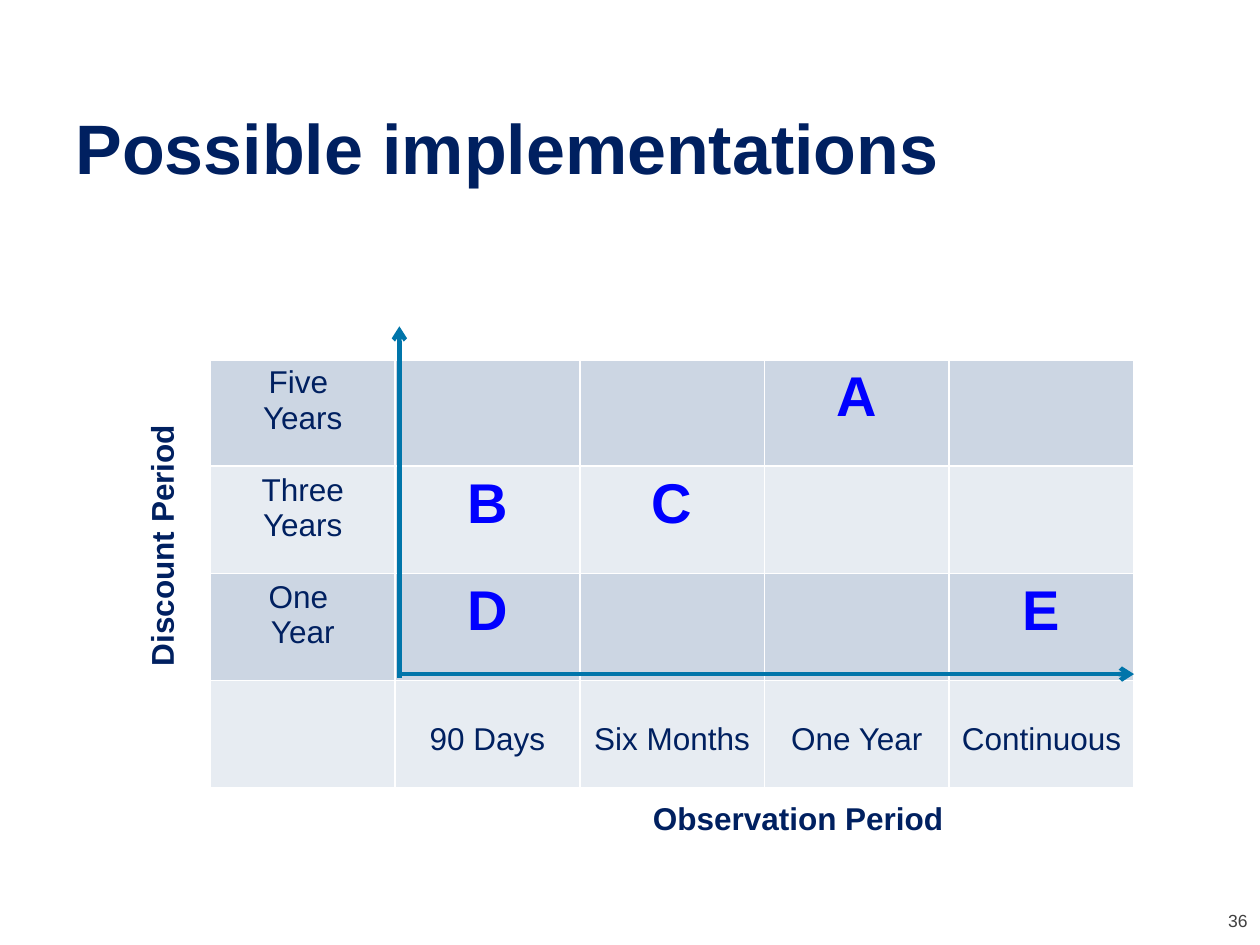
import dataclasses

import pptx
import pptx.dml.color
import pptx.enum.shapes
import pptx.enum.text
import pptx.oxml.ns
import pptx.util
from lxml import etree

Inches = pptx.util.Inches
Align = pptx.enum.text.PP_ALIGN
Anchor = pptx.enum.text.MSO_ANCHOR
qn = pptx.oxml.ns.qn

NAVY, BLUE, TEAL, GREY, WHITE = "002060", "0000FF", "0075AA", "404040", "FFFFFF"
BANDS = ("CCD6E3", "E7ECF2")
ROWS = [
    ["", "", "", "", ""],
    ["Five \vYears", "", "", "A", ""],
    ["Three Years", "B", "C", "", ""],
    ["One \vYear", "D", "", "", "E"],
    ["", "90 Days", "Six Months", "One Year", "Continuous"],
]


@dataclasses.dataclass
class Label:
    text: str
    left: float
    top: float
    width: float
    height: float
    size: int = 18
    color: str = NAVY
    bold: bool = True
    align: Align = Align.CENTER
    anchor: Anchor = Anchor.TOP
    rotation: int = 0


@dataclasses.dataclass
class Axis:
    start: tuple[float, float]
    end: tuple[float, float]


LABELS = [
    Label("36", 7.67, 7.11, 2.33, 0.4, 10, GREY, False, Align.RIGHT, Anchor.MIDDLE),
    Label("Observation Period", 4.25, 6.29, 4.17, 0.42),
    Label("Discount Period", -0.21, 4.12, 3, 0.42, rotation=270),
]
AXES = [Axis((3.17, 5.38), (3.17, 2.59)), Axis((3.17, 5.35), (9, 5.35))]


def rgb(value: str) -> pptx.dml.color.RGBColor:
    return pptx.dml.color.RGBColor.from_string(value)


def write(frame, text: str, size: int, color: str, bold: bool, align: Align) -> None:
    para = frame.paragraphs[0]
    para.text = text
    para.alignment = align
    para.font.name = "Arial"
    para.font.size = pptx.util.Pt(size)
    para.font.bold = bold
    para.font.color.rgb = rgb(color)


def add_label(page, label: Label) -> None:
    box = page.shapes.add_textbox(*map(Inches, (label.left, label.top, label.width, label.height)))
    box.rotation = label.rotation
    box.text_frame.word_wrap = True
    box.text_frame.vertical_anchor = label.anchor
    write(box.text_frame, label.text, label.size, label.color, label.bold, label.align)


def add_axis(page, axis: Axis) -> None:
    line = page.shapes.add_connector(
        pptx.enum.shapes.MSO_CONNECTOR.STRAIGHT, *map(Inches, axis.start + axis.end))
    line.line.color.rgb = rgb(TEAL)
    line.line.width = pptx.util.Pt(2.5)
    etree.SubElement(line.line._get_or_add_ln(), qn("a:tailEnd"), type="arrow")
    etree.SubElement(line._element.spPr, qn("a:effectLst"))


def set_borders(cell, bottom: int) -> None:
    properties = cell._tc.get_or_add_tcPr()
    widths = {"lnL": 1, "lnR": 1, "lnT": 1, "lnB": bottom}
    for position, (side, points) in enumerate(widths.items()):
        border = etree.Element(qn(f"a:{side}"), w=str(pptx.util.Pt(points)))
        fill = etree.SubElement(border, qn("a:solidFill"))
        etree.SubElement(fill, qn("a:srgbClr"), val=WHITE)
        properties.insert(position, border)


def add_grid(page) -> None:
    table = page.shapes.add_table(
        len(ROWS), len(ROWS[0]), Inches(1.67), Inches(2), Inches(7.33), Inches(4.25)).table
    last = len(ROWS) - 1
    for row, texts in enumerate(ROWS):
        for column, text in enumerate(texts):
            cell = table.cell(row, column)
            cell.fill.solid()
            cell.fill.fore_color.rgb = rgb(BANDS[(row - 1) % 2] if row else WHITE)
            set_borders(cell, bottom=1 if row else 3)
            if row == last:
                cell.margin_top = Inches(0.33)  # drops the period names below the axis
            option = len(text) == 1
            write(cell.text_frame, text, 32 if option else 18,
                  BLUE if option else NAVY, option, Align.CENTER)


def main() -> None:
    deck = pptx.Presentation()
    deck.slide_width, deck.slide_height = Inches(10), Inches(7.5)
    page = deck.slides.add_slide(deck.slide_layouts[5])

    # Title
    title = page.shapes.title
    title.left, title.top, title.width, title.height = map(Inches, (0.5, 0.75, 9, 0.83))
    title.text_frame.vertical_anchor = Anchor.MIDDLE
    write(title.text_frame, "Possible implementations", 40, NAVY, True, Align.LEFT)

    # Grid of options, axis names and page number
    add_grid(page)
    for label in LABELS:
        add_label(page, label)

    # Axis arrows
    for axis in AXES:
        add_axis(page, axis)

    deck.save("out.pptx")


if __name__ == "__main__":
    main()
